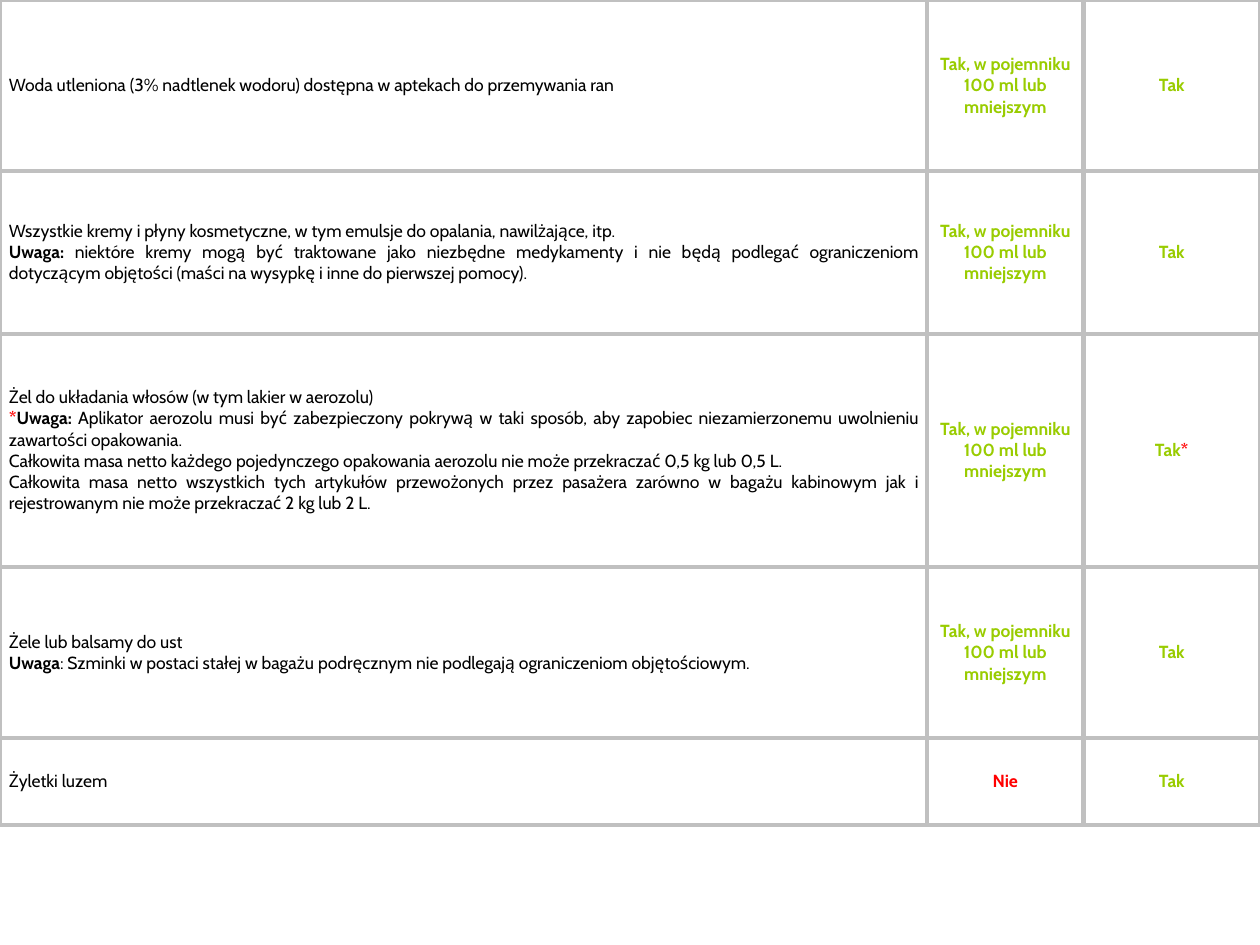
"""Builds a slide with a table of items allowed in cabin and checked baggage."""
from lxml import etree
from pptx import Presentation
from pptx.dml.color import RGBColor
from pptx.enum.text import MSO_ANCHOR, PP_ALIGN
from pptx.oxml.ns import qn
from pptx.util import Cm, Pt

MIDDLE = MSO_ANCHOR.MIDDLE
JUSTIFY, CENTER = PP_ALIGN.JUSTIFY, PP_ALIGN.CENTER

COLORS = {
    "text": "000000",
    "yes": "99CC00",
    "no": "FF0000",
    "border": "C0C0C0",
    "cell": "FFFFFF",
}
STYLES = {
    "plain": ("text", False),
    "bold": ("text", True),
    "yes": ("yes", True),
    "no": ("no", True),
}
FONT = {"name": "Cabin", "size": Pt(10)}
CELL = {
    "vertical_anchor": MIDDLE,
    "margin_left": Cm(0.18),
    "margin_right": Cm(0.18),
    "margin_top": 0,
    "margin_bottom": 0,
}
BORDER_WIDTH = Pt(3)

COL_WIDTHS = [18.69, 3.15, 3.56]
ROW_HEIGHTS = [3.45, 3.28, 4.7, 3.45, 1.75]

SMALL = [[("Tak, w pojemniku 100 ml lub mniejszym", "yes")]]
YES = [[("Tak", "yes")]]
YES_NOTE = [[("Tak", "yes"), ("*", "no")]]
NO = [[("Nie", "no")]]

ROWS = [
    ([[("Woda utleniona (3% nadtlenek wodoru) dostępna w aptekach do przemywania ran", "plain")]],
     SMALL, YES),
    ([[("Wszystkie kremy i płyny kosmetyczne, w tym emulsje do opalania, nawilżające, itp.", "plain")],
      [("Uwaga:", "bold"),
       (" niektóre kremy mogą być traktowane jako niezbędne medykamenty i nie będą podlegać "
        "ograniczeniom dotyczącym objętości (maści na wysypkę i inne do pierwszej pomocy).", "plain")]],
     SMALL, YES),
    ([[("Żel do układania włosów (w tym lakier w aerozolu)", "plain")],
      [("*", "no"), ("Uwaga: ", "bold"),
       ("Aplikator aerozolu musi być zabezpieczony pokrywą w taki sposób, aby zapobiec "
        "niezamierzonemu uwolnieniu zawartości opakowania.", "plain")],
      [("Całkowita masa netto każdego pojedynczego opakowania aerozolu nie może przekraczać "
        "0,5 kg lub 0,5 L.", "plain")],
      [("Całkowita masa netto wszystkich tych artykułów przewożonych przez pasażera zarówno "
        "w bagażu kabinowym jak i rejestrowanym nie może przekraczać 2 kg lub 2 L.", "plain")]],
     SMALL, YES_NOTE),
    ([[("Żele lub balsamy do ust", "plain")],
      [("Uwaga", "bold"),
       (": Szminki w postaci stałej w bagażu podręcznym nie podlegają ograniczeniom "
        "objętościowym.", "plain")]],
     SMALL, YES),
    ([[("Żyletki luzem", "plain")]], NO, YES),
]


def set_attrs(obj, values):
    """Set each named attribute of an object."""
    for name, value in values.items():
        setattr(obj, name, value)


def add_run(p, text, style):
    """Add one styled run to a paragraph."""
    color, bold = STYLES[style]
    r = p.add_run()
    r.text = text
    set_attrs(r.font, {**FONT, "bold": bold})
    r.font.color.rgb = RGBColor.from_string(COLORS[color])


def add_borders(cell):
    """Draw the same solid line on all four sides of a cell."""
    tc_pr = cell._tc.get_or_add_tcPr()
    for i, side in enumerate(("lnL", "lnR", "lnT", "lnB")):
        ln = etree.Element(qn(f"a:{side}"), w=str(BORDER_WIDTH))
        fill = etree.SubElement(ln, qn("a:solidFill"))
        etree.SubElement(fill, qn("a:srgbClr"), val=COLORS["border"])
        tc_pr.insert(i, ln)


def fill_cell(cell, paragraphs, align):
    """Format a cell and write its paragraphs."""
    set_attrs(cell, CELL)
    cell.fill.solid()
    cell.fill.fore_color.rgb = RGBColor.from_string(COLORS["cell"])
    add_borders(cell)
    tf = cell.text_frame
    for i, runs in enumerate(paragraphs):
        p = tf.add_paragraph() if i else tf.paragraphs[0]
        p.alignment = align
        for text, style in runs:
            add_run(p, text, style)


def add_baggage_table(s):
    """Add the baggage table at the top left of the slide."""
    table = s.shapes.add_table(len(ROWS), len(COL_WIDTHS), 0, 0,
                               Cm(sum(COL_WIDTHS)), Cm(sum(ROW_HEIGHTS))).table
    set_attrs(table, {"first_row": False, "horz_banding": False})
    for column, width in zip(table.columns, COL_WIDTHS):
        column.width = Cm(width)
    for row, height, contents in zip(table.rows, ROW_HEIGHTS, ROWS):
        row.height = Cm(height)
        for cell, paragraphs, align in zip(row.cells, contents, (JUSTIFY, CENTER, CENTER)):
            fill_cell(cell, paragraphs, align)


def main():
    """Build and save the presentation."""
    prs = Presentation()
    set_attrs(prs, {"slide_width": Cm(25.4), "slide_height": Cm(19.05)})
    s = prs.slides.add_slide(prs.slide_layouts[6])
    add_baggage_table(s)
    prs.save("out.pptx")


if __name__ == "__main__":
    main()
